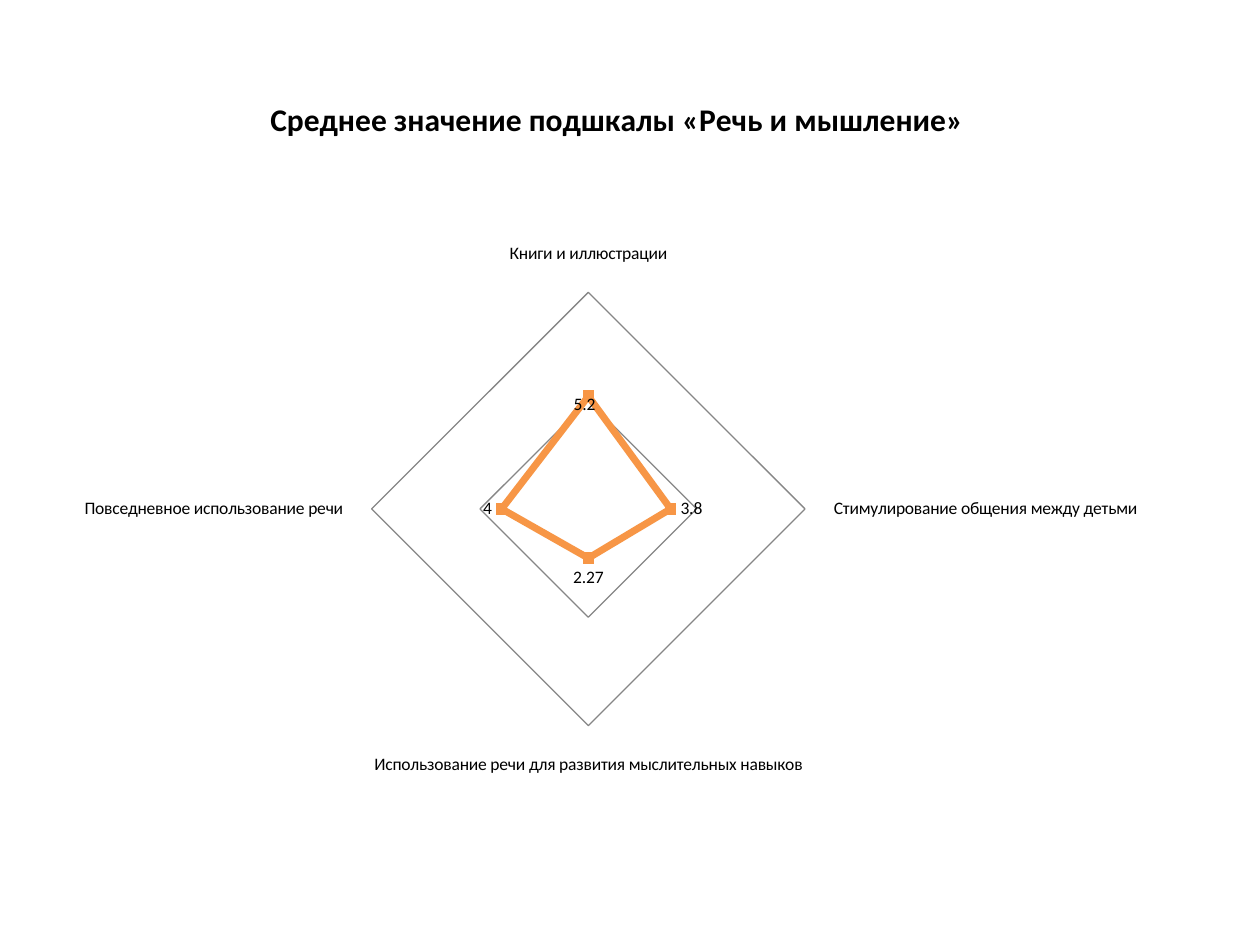
"""Build a slide with a radar chart of the speech and thinking subscale means."""
import pptx
import pptx.chart.data
import pptx.dml.color
import pptx.enum.chart
import pptx.oxml
import pptx.oxml.ns
import pptx.util
from pptx.util import Inches, Pt

TITLE = "Среднее значение подшкалы «Речь и мышление»"
SERIES_NAME = "Series 1"
MEANS = [
    ("Книги и иллюстрации", 5.2),
    ("Стимулирование общения между детьми", 3.8),
    ("Использование речи для развития мыслительных навыков", 2.27),
    ("Повседневное использование речи", 4),
]
THEME = {
    "font": "Calibri", "title_size": 18, "label_size": 10,
    "text": "000000", "profile": "F79646", "grid": "868686",
}
CHART_BOX = (0.35, 0.52, 9, 6.46)
CENTER, RADIUS = (4.67, 4.04), 1.72
TITLE_CORNER = (2.1, 0.73)
FIRST_LABEL_SHIFT = (-0.03, 0.22)


def color(role):
    return pptx.dml.color.RGBColor.from_string(THEME[role])


def style_font(font, size, bold=False):
    font.name, font.size, font.bold = THEME["font"], Pt(THEME[size]), bold
    font.color.rgb = color("text")


def style_line(line, role, width):
    line.color.rgb, line.width = color(role), Pt(width)


def place(part, index, fractions, edge=True, inner=False):
    """Insert a manual layout given in fractions of the chart box."""
    for old in part.findall(pptx.oxml.ns.qn("c:layout")):
        part.remove(old)
    settings = [("layoutTarget", "inner")] if inner else []
    if edge:
        settings += [("xMode", "edge"), ("yMode", "edge")]
    settings += zip("xywh", fractions)
    body = "".join(f'<c:{tag} val="{value}"/>' for tag, value in settings)
    part.insert(index, pptx.oxml.parse_xml(
        f'<c:layout {pptx.oxml.ns.nsdecls("c")}><c:manualLayout>{body}'
        "</c:manualLayout></c:layout>"))


def main():
    deck = pptx.Presentation()
    deck.slide_width, deck.slide_height = Inches(10), Inches(7.5)
    slide = deck.slides.add_slide(deck.slide_layouts[6])

    means = pptx.chart.data.CategoryChartData()
    means.categories = [name for name, _ in MEANS]
    means.add_series(SERIES_NAME, [mean for _, mean in MEANS])
    radar = slide.shapes.add_chart(
        pptx.enum.chart.XL_CHART_TYPE.RADAR_MARKERS,
        *map(Inches, CHART_BOX), means).chart
    left, top, width, height = CHART_BOX
    style_font(radar.font, "label_size")
    radar.has_legend = False

    heading = radar.chart_title.text_frame.paragraphs[0].add_run()
    heading.text = TITLE
    style_font(heading.font, "title_size", bold=True)
    place(radar.chart_title._element, 1,
          ((TITLE_CORNER[0] - left) / width, (TITLE_CORNER[1] - top) / height))

    place(radar._chartSpace.chart.plotArea, 0,
          ((CENTER[0] - RADIUS - left) / width, (CENTER[1] - RADIUS - top) / height,
           2 * RADIUS / width, 2 * RADIUS / height), inner=True)

    scale = radar.value_axis
    scale.minimum_scale, scale.maximum_scale, scale.major_unit = 0, 10, 5
    scale.has_major_gridlines = True
    style_line(scale.major_gridlines.format.line, "grid", 0.75)
    scale.visible = False
    subscales = radar.category_axis
    subscales.major_tick_mark = pptx.enum.chart.XL_TICK_MARK.NONE
    subscales.format.line.fill.background()
    style_font(subscales.tick_labels.font, "label_size")

    radar.plots[0].vary_by_categories = False
    profile = radar.plots[0].series[0]
    profile.smooth = False
    style_line(profile.format.line, "profile", 4)
    profile.marker.style = pptx.enum.chart.XL_MARKER_STYLE.SQUARE
    profile.marker.size = 6
    profile.marker.format.fill.solid()
    profile.marker.format.fill.fore_color.rgb = color("profile")
    profile.marker.format.line.color.rgb = color("profile")

    profile.data_labels.show_value = True
    style_font(profile.data_labels.font, "label_size")
    first_label = profile.points[0].data_label
    style_font(first_label.font, "label_size")
    place(first_label._dLbl, 1,
          (FIRST_LABEL_SHIFT[0] / width, FIRST_LABEL_SHIFT[1] / height), edge=False)

    deck.save("out.pptx")


if __name__ == "__main__":
    main()
